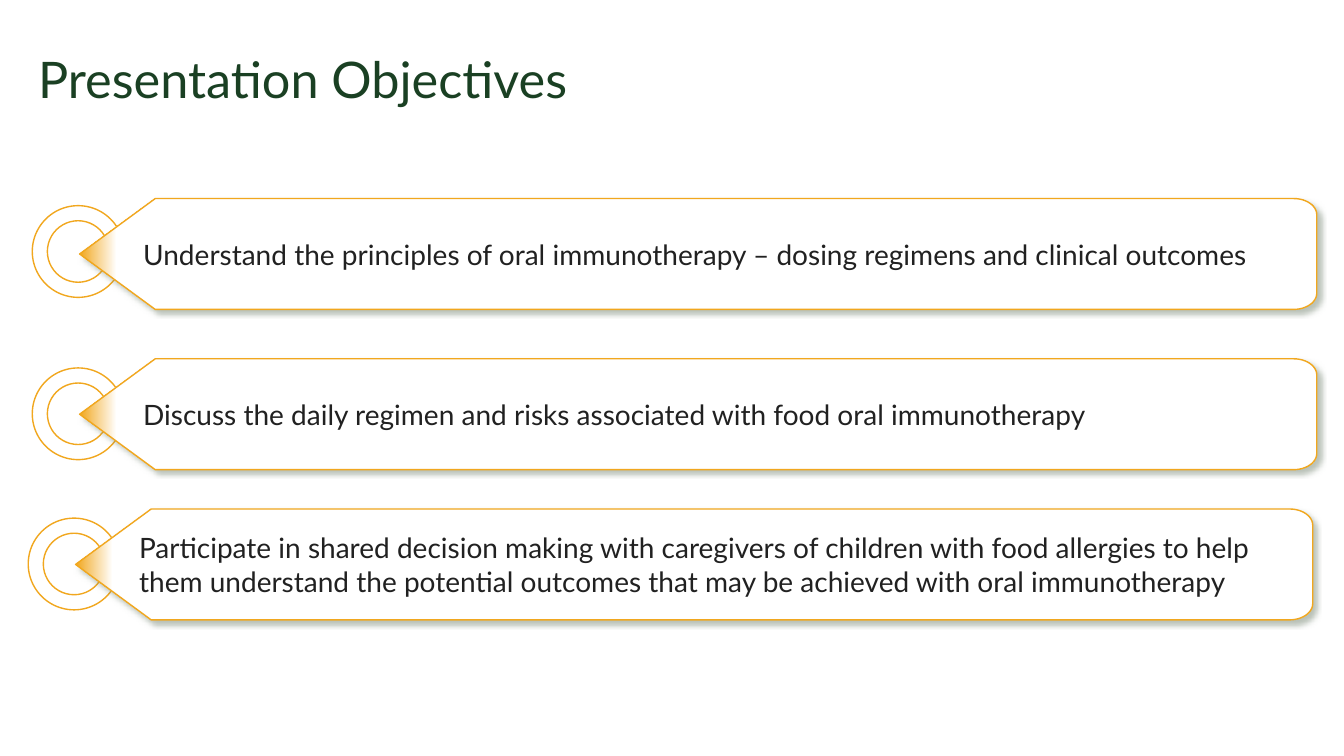
import math

from pptx import Presentation
from pptx import util as u
from pptx.dml.color import RGBColor
from pptx.enum import shapes, text
from pptx.oxml import parse_xml
from pptx.oxml.ns import nsdecls, qn

WHITE = RGBColor(0xFF, 0xFF, 0xFF)
GREEN = RGBColor(0x1A, 0x40, 0x23)
GOLD = RGBColor(0xF1, 0xA7, 0x1E)
INK = RGBColor(0x21, 0x21, 0x21)
SHADOW = RGBColor(0x75, 0x85, 0x72)

FONT = "Lato"
BANNER_W, BANNER_H = 12.27, 1.1
POINT_W = 0.75                    # length of the banner's left point
CORNER_X, CORNER_Y = 0.23, 0.16   # radii of the right-hand corners
RING_D, RING_BAND, RING_OUT = 0.91, 0.15, 0.47

# Left and top of each banner, drop of its ring, wording
OBJECTIVES = [
    (0.79, 1.97, 0.07, "Understand the principles of oral immunotherapy – "
                       "dosing regimens and clinical outcomes"),
    (0.79, 3.56, 0.09, "Discuss the daily regimen and risks associated with "
                       "food oral immunotherapy"),
    (0.75, 5.05, 0.09, "Participate in shared decision making with caregivers "
                       "of children with food allergies to help them understand "
                       "the potential outcomes that may be achieved with oral "
                       "immunotherapy"),
]


def write(sp, words, size, color, insets):
    tf = sp.text_frame
    tf.word_wrap = True
    tf.vertical_anchor = text.MSO_ANCHOR.MIDDLE
    (tf.margin_left, tf.margin_top,
     tf.margin_right, tf.margin_bottom) = map(u.Inches, insets)
    p = tf.paragraphs[0]
    p.alignment = text.PP_ALIGN.LEFT
    r = p.add_run()
    r.text = words
    r.font.name, r.font.size, r.font.color.rgb = FONT, u.Pt(size), color
    return p


def outline(sp):
    sp.line.color.rgb = GOLD
    sp.line.width = u.Pt(1)
    sp.shadow.inherit = False


def add_title(s, left, top, width, height):
    sp = s.shapes.add_textbox(*map(u.Inches, (left, top, width, height)))
    p = write(sp, "Presentation Objectives", 36, GREEN, (0.1, 0.05, 0.1, 0.05))
    p.line_spacing = 0.9


def add_ring(s, left, top):
    sp = s.shapes.add_shape(
        shapes.MSO_SHAPE.DONUT,
        *map(u.Inches, (left, top, RING_D, RING_D)))
    sp.adjustments[0] = RING_BAND / RING_D
    sp.fill.solid()
    sp.fill.fore_color.rgb = WHITE
    color = sp.fill._xPr.find(".//" + qn("a:srgbClr"))
    color.append(parse_xml(f'<a:alpha {nsdecls("a")} val="50000"/>'))
    outline(sp)


def corner(cx, cy, start):
    """Points of a quarter ellipse, clockwise from the start angle."""
    angles = [math.radians(start + 7.5 * i) for i in range(13)]
    return [(cx + CORNER_X * math.cos(a), cy + CORNER_Y * math.sin(a))
            for a in angles]


def add_banner(s, left, top, words):
    right, bottom = left + BANNER_W, top + BANNER_H
    points = [
        (left, top + BANNER_H / 2),
        (left + POINT_W, top),
        *corner(right - CORNER_X, top + CORNER_Y, -90),
        *corner(right - CORNER_X, bottom - CORNER_Y, 0),
        (left + POINT_W, bottom),
    ]
    points = [(u.Inches(x), u.Inches(y)) for x, y in points]
    builder = s.shapes.build_freeform(*points[0])
    builder.add_line_segments(points[1:], close=True)
    sp = builder.convert_to_shape()

    # Gold tip fading to white
    sp.fill.gradient()
    sp.fill.gradient_angle = 0
    for stop, place, color in zip(sp.fill.gradient_stops, (0, 0.03), (GOLD, WHITE)):
        stop.position, stop.color.rgb = place, color
    outline(sp)

    # Soft shadow to the lower right
    effects = sp._element.spPr.find(qn("a:effectLst"))
    effects.append(parse_xml(
        f'<a:outerShdw {nsdecls("a")} blurRad="{u.Pt(4)}" dist="{u.Pt(3)}" '
        f'dir="2700000" algn="tl" rotWithShape="0"><a:srgbClr val="{SHADOW}">'
        '<a:alpha val="50000"/></a:srgbClr></a:outerShdw>'))
    write(sp, words, 20, INK, (0.63, 0.08, 0.14, 0.08))


def add_objective(s, left, top, ring_drop, words):
    add_ring(s, left - RING_OUT, top + ring_drop)
    add_banner(s, left, top, words)


def main():
    prs = Presentation()
    prs.slide_width, prs.slide_height = u.Inches(13.33), u.Inches(7.5)
    s = prs.slides.add_slide(prs.slide_layouts[6])
    s.background.fill.solid()
    s.background.fill.fore_color.rgb = WHITE

    add_title(s, 0.28, 0.19, 12.78, 1.25)
    for objective in OBJECTIVES:
        add_objective(s, *objective)
    prs.save("out.pptx")


if __name__ == "__main__":
    main()
